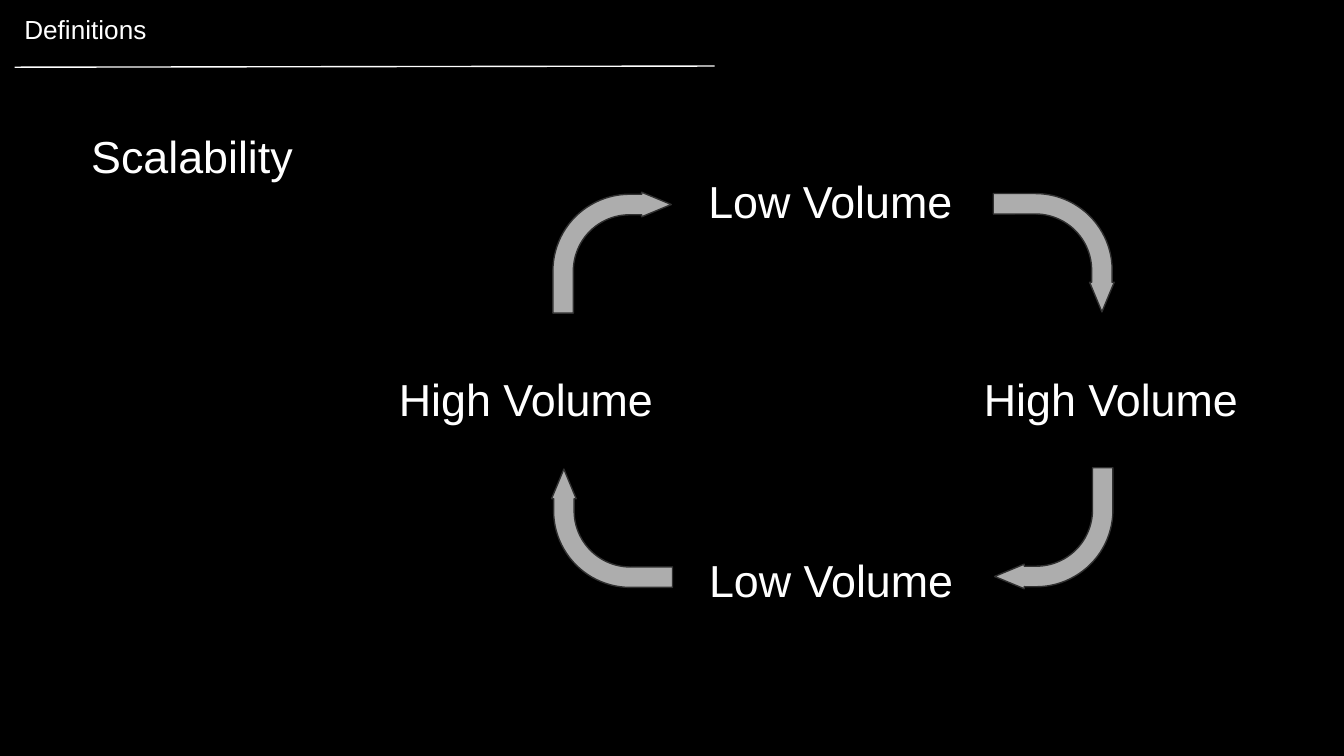
"""Build the Definitions slide with the scalability volume cycle."""
from typing import NamedTuple

from lxml.etree import SubElement
from pptx import Presentation
from pptx.dml.color import RGBColor
from pptx.enum.shapes import MSO_CONNECTOR as Connector, MSO_SHAPE as Shape
from pptx.enum.text import MSO_ANCHOR as Anchor, MSO_AUTO_SIZE as AutoSize, PP_ALIGN as Align
from pptx.oxml.ns import qn
from pptx.slide import Slide
from pptx.text.text import TextFrame
from pptx.util import Pt

BLACK = RGBColor(0x00, 0x00, 0x00)
WHITE = RGBColor(0xFF, 0xFF, 0xFF)
GREY = RGBColor(0xAD, 0xAD, 0xAD)
DARK_GREY = RGBColor(0x30, 0x30, 0x30)

INSET = Pt(7.2)
FRAME_FORMAT = {
    "word_wrap": True,
    "auto_size": AutoSize.NONE,
    "vertical_anchor": Anchor.TOP,
    "margin_left": INSET,
    "margin_top": INSET,
    "margin_right": INSET,
    "margin_bottom": INSET,
}
LABEL_HEIGHT = 41.8
ARROW_WIDTH, ARROW_HEIGHT = 63.4, 64.8
ARROW_ADJUSTMENTS = (0.173, 0.104, 0.25, 0.648)
LEFT_ARROWS, RIGHT_ARROWS = 296.2, 532.8
TOP_ARROWS, BOTTOM_ARROWS = 103, 250.6


class Label(NamedTuple):
    text: str
    left: float
    top: float
    width: float


class CycleArrow(NamedTuple):
    left: float
    top: float
    rotation: int


LABELS = (
    Label("Scalability", 41.8, 61.9, 147),
    Label("Low Volume", 372.4, 85.7, 147),
    Label("High Volume", 520, 192.2, 166.3),
    Label("Low Volume", 372.8, 289, 147),
    Label("High Volume", 206.6, 192.2, 166.3),
)
CYCLE_ARROWS = (
    CycleArrow(LEFT_ARROWS, TOP_ARROWS, 0),
    CycleArrow(RIGHT_ARROWS, TOP_ARROWS, 90),
    CycleArrow(RIGHT_ARROWS, BOTTOM_ARROWS, 180),
    CycleArrow(LEFT_ARROWS, BOTTOM_ARROWS, 270),
)


def write_text(frame: TextFrame, text: str, size: float) -> None:
    for name, value in FRAME_FORMAT.items():
        setattr(frame, name, value)
    paragraph = frame.paragraphs[0]
    paragraph.alignment = Align.LEFT
    run = paragraph.add_run()
    run.text = text
    for name, value in {"name": "Arial", "size": Pt(size)}.items():
        setattr(run.font, name, value)
    run.font.color.rgb = WHITE


def draw_heading(slide: Slide) -> None:
    heading = slide.shapes.title
    bounds = {"left": 5.8, "top": 0, "width": 354.2, "height": 36.7}
    for name, value in bounds.items():
        setattr(heading, name, Pt(value))
    write_text(heading.text_frame, "Definitions", 14)

    underline = slide.shapes.add_connector(
        Connector.STRAIGHT, Pt(7.9), Pt(36), Pt(382.8), Pt(35.4)
    )
    underline.line.color.rgb = WHITE
    underline.line.width = Pt(0.75)
    SubElement(underline.element.spPr, qn("a:effectLst"))


def draw_label(slide: Slide, label: Label) -> None:
    box = slide.shapes.add_textbox(
        Pt(label.left), Pt(label.top), Pt(label.width), Pt(LABEL_HEIGHT)
    )
    write_text(box.text_frame, label.text, 24)


def draw_arrow(slide: Slide, cycle_arrow: CycleArrow) -> None:
    arrow = slide.shapes.add_shape(
        Shape.BENT_ARROW, Pt(cycle_arrow.left), Pt(cycle_arrow.top),
        Pt(ARROW_WIDTH), Pt(ARROW_HEIGHT),
    )
    arrow.rotation = cycle_arrow.rotation
    for index, value in enumerate(ARROW_ADJUSTMENTS):
        arrow.adjustments[index] = value
    arrow.shadow.inherit = False
    arrow.fill.solid()
    arrow.fill.fore_color.rgb = GREY
    arrow.line.color.rgb = DARK_GREY
    arrow.line.width = Pt(0.75)


def main() -> None:
    deck = Presentation()
    deck.slide_width, deck.slide_height = Pt(720), Pt(405)
    slide = deck.slides.add_slide(deck.slide_layouts.get_by_name("Title Only"))
    slide.background.fill.solid()
    slide.background.fill.fore_color.rgb = BLACK
    draw_heading(slide)
    for label in LABELS:
        draw_label(slide, label)
    for cycle_arrow in CYCLE_ARROWS:
        draw_arrow(slide, cycle_arrow)
    deck.save("out.pptx")


if __name__ == "__main__":
    main()
